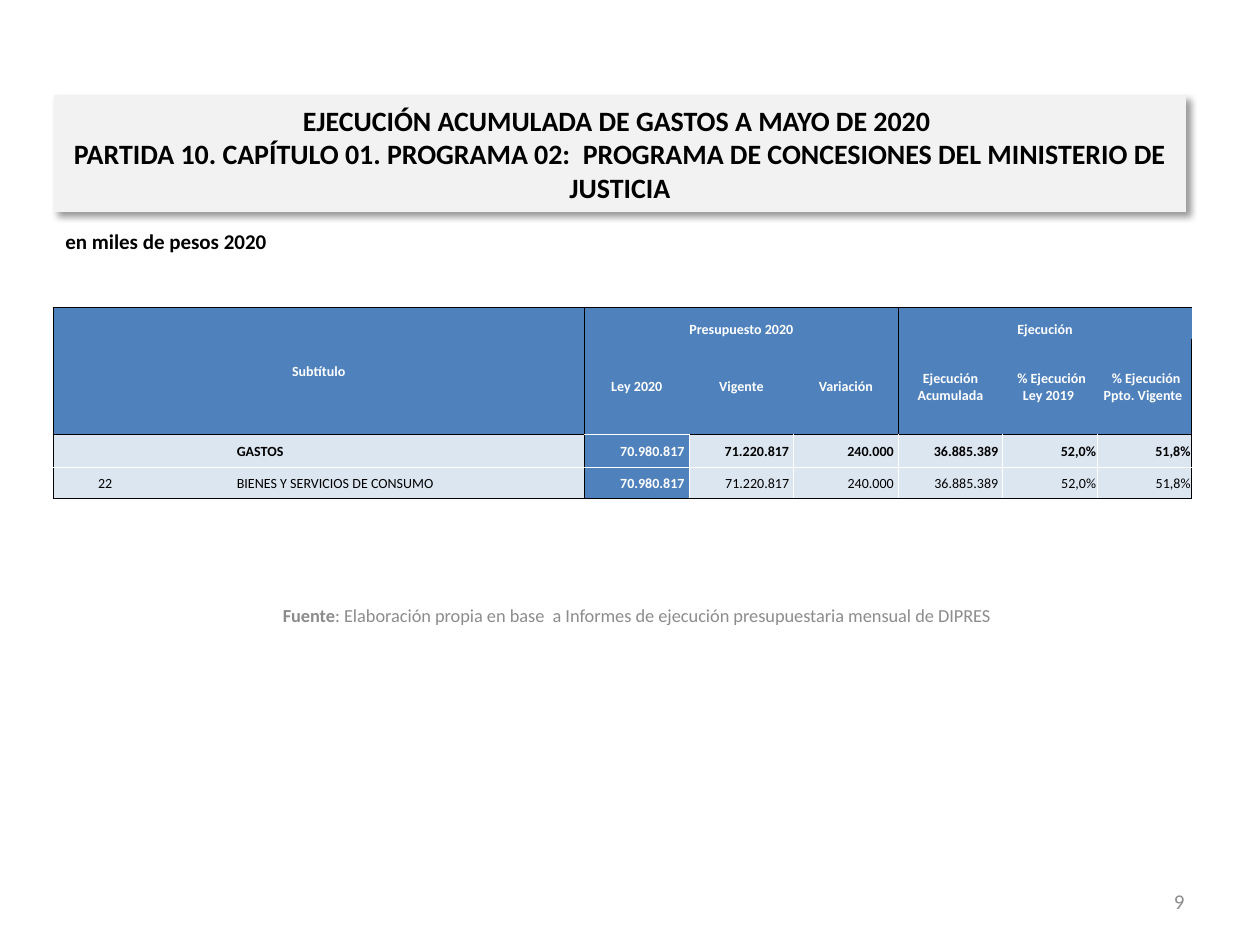
from lxml import etree
from pptx import Presentation
from pptx.dml.color import RGBColor
from pptx.enum.shapes import MSO_SHAPE
from pptx.enum.text import MSO_ANCHOR, PP_ALIGN
from pptx.oxml.ns import qn
from pptx.util import Inches, Pt

LEFT, CENTER, RIGHT, JUSTIFY = (
    PP_ALIGN.LEFT, PP_ALIGN.CENTER, PP_ALIGN.RIGHT, PP_ALIGN.JUSTIFY)
TOP, MIDDLE, BOTTOM = MSO_ANCHOR.TOP, MSO_ANCHOR.MIDDLE, MSO_ANCHOR.BOTTOM

BLACK = RGBColor(0x00, 0x00, 0x00)
WHITE = RGBColor(0xFF, 0xFF, 0xFF)
GREY = RGBColor(0x8C, 0x8C, 0x8C)
PALE_GREY = RGBColor(0xF2, 0xF2, 0xF2)
BLUE = RGBColor(0x4F, 0x81, 0xBD)
PALE_BLUE = RGBColor(0xDC, 0xE6, 0xF1)

FONT = "Calibri"
WIDTH, HEIGHT = Inches(10), Inches(7.5)

COLS = [0.83, 0.31, 0.31, 2.77] + [0.83] * 4 + [0.75] * 2
ROWS = [0.25, 0.76, 0.26, 0.25]
HEADER_ROWS = 2
FIRST_VALUE, FIRST_EXECUTION = 4, 7

GROUPS = [  # text, first cell, last cell, anchor
    ("Subtítulo", (0, 0), (1, 3), MIDDLE),
    ("Presupuesto 2020", (0, 4), (0, 6), BOTTOM),
    ("Ejecución", (0, 7), (0, 9), BOTTOM),
]
HEADINGS = ["Ley 2020", "Vigente", "Variación", "Ejecución Acumulada",
            " % Ejecución Ley 2019 ", " % Ejecución Ppto. Vigente "]
VALUES = ["70.980.817 ", "71.220.817 ", "240.000 ", "36.885.389 ",
          "52,0%", "51,8%"]
BODY = [["", "", "", "GASTOS"] + VALUES,
        ["22", "", "", "BIENES Y SERVICIOS DE CONSUMO"] + VALUES]


def box(x, y, w, h):
    """Turn shares of the slide's size into lengths."""
    return int(x * WIDTH), int(y * HEIGHT), int(w * WIDTH), int(h * HEIGHT)


def write(tf, runs, size, color, align=LEFT, anchor=MIDDLE):
    """Fill one paragraph with (text, bold) runs; "\\v" breaks the line."""
    tf.word_wrap = True
    tf.vertical_anchor = anchor
    p = tf.paragraphs[0]
    p.alignment = align
    for text, bold in runs:
        for i, line in enumerate(text.split("\v")):
            if i:
                p.add_line_break()
            r = p.add_run()
            r.text = line
            r.font.color.rgb = color
            for name, value in {"name": FONT, "size": Pt(size),
                                "bold": bold}.items():
                setattr(r.font, name, value)


def add_text(slide, area, *args, **kwargs):
    write(slide.shapes.add_textbox(*box(*area)).text_frame, *args, **kwargs)


def add_shadow(sp):
    effects = etree.SubElement(sp._element.spPr, qn("a:effectLst"))
    shadow = etree.SubElement(
        effects, qn("a:outerShdw"), blurRad=str(Pt(4)), dist=str(Pt(3)),
        dir=str(45 * 60000), algn="tl", rotWithShape="0")
    color = etree.SubElement(shadow, qn("a:srgbClr"), val=str(BLACK))
    etree.SubElement(color, qn("a:alpha"), val="40000")


def add_title(slide, area, text):
    sp = slide.shapes.add_shape(MSO_SHAPE.RECTANGLE, *box(*area))
    sp.fill.solid()
    sp.fill.fore_color.rgb = PALE_GREY
    sp.line.color.rgb = PALE_GREY
    sp.line.width = Pt(0.75)
    add_shadow(sp)
    write(sp.text_frame, [(text, True)], 16, BLACK, CENTER)


def horizontal_edge(i, col):
    """Colour of the line above row i, or None."""
    if i == HEADER_ROWS:
        return WHITE if col == FIRST_VALUE else BLACK
    return {0: BLACK, 3: WHITE, len(ROWS): BLACK}.get(i)


def vertical_edge(row, j):
    """Colour of the line left of column j, or None."""
    if j in (0, FIRST_VALUE, len(COLS)):
        return BLACK
    if row < HEADER_ROWS:
        return BLACK if j == FIRST_EXECUTION else None
    return WHITE if j > FIRST_VALUE else None


def format_cell(cell, row, col):
    margins = {"left": 0.01, "right": 0.01, "top": 0.01, "bottom": 0}
    for side, inset in margins.items():
        setattr(cell, f"margin_{side}", Inches(inset))
    edges = {"a:lnL": vertical_edge(row, col),
             "a:lnR": vertical_edge(row, col + 1),
             "a:lnT": horizontal_edge(row, col),
             "a:lnB": horizontal_edge(row + 1, col)}
    tc_pr = cell._tc.get_or_add_tcPr()
    for tag, color in edges.items():
        ln = etree.SubElement(tc_pr, qn(tag), w=str(Pt(0.5)))
        if color is None:
            etree.SubElement(ln, qn("a:noFill"))
        else:
            fill = etree.SubElement(ln, qn("a:solidFill"))
            etree.SubElement(fill, qn("a:srgbClr"), val=str(color))
    blue = row < HEADER_ROWS or col == FIRST_VALUE
    cell.fill.solid()
    cell.fill.fore_color.rgb = BLUE if blue else PALE_BLUE


def write_cell(cell, text, color, bold, align=CENTER, anchor=MIDDLE):
    cell.vertical_anchor = anchor
    if text:
        write(cell.text_frame, [(text, bold)], 8, color, align, anchor)
    else:
        p = cell.text_frame.paragraphs[0]
        etree.SubElement(p._p, qn("a:endParaRPr"), sz="800")


def add_budget_table(slide, x, y):
    area = box(x, y, sum(COLS) / 10, sum(ROWS) / 7.5)
    table = slide.shapes.add_table(len(ROWS), len(COLS), *area).table
    for column, width in zip(table.columns, COLS):
        column.width = Inches(width)
    for row, height in zip(table.rows, ROWS):
        row.height = Inches(height)
    for row in range(len(ROWS)):
        for col in range(len(COLS)):
            format_cell(table.cell(row, col), row, col)

    for text, first, last, anchor in GROUPS:
        table.cell(*first).merge(table.cell(*last))
        write_cell(table.cell(*first), text, WHITE, True, anchor=anchor)
    for col, text in enumerate(HEADINGS, FIRST_VALUE):
        write_cell(table.cell(1, col), text, WHITE, True)
    for row, texts in enumerate(BODY, HEADER_ROWS):
        for col, text in enumerate(texts):
            law = col == FIRST_VALUE
            align = {0: CENTER, 3: JUSTIFY}.get(col, RIGHT)
            write_cell(table.cell(row, col), text, WHITE if law else BLACK,
                       law or row == HEADER_ROWS, align)


def main():
    prs = Presentation()
    prs.slide_width, prs.slide_height = WIDTH, HEIGHT
    slide = prs.slides.add_slide(prs.slide_layouts[6])

    add_text(slide, (0.046, 0.625, 0.919, 0.053),
             [("Fuente", True),
              (": Elaboración propia en base  a Informes de ejecución "
               "presupuestaria mensual de DIPRES", False)],
             10.5, GREY, CENTER)
    add_text(slide, (0.717, 0.927, 0.233, 0.053), [("9", False)],
             12, GREY, RIGHT)
    add_text(slide, (0.042, 0.235, 0.9, 0.045),
             [("en miles de pesos 2020", True)], 12, BLACK, anchor=TOP)
    add_title(slide, (0.043, 0.101, 0.898, 0.123),
              "EJECUCIÓN ACUMULADA DE GASTOS A MAYO DE 2020 \v"
              "PARTIDA 10. CAPÍTULO 01. PROGRAMA 02:  PROGRAMA DE "
              "CONCESIONES DEL MINISTERIO DE JUSTICIA")
    add_budget_table(slide, 0.042, 0.325)

    prs.save("out.pptx")


if __name__ == "__main__":
    main()
